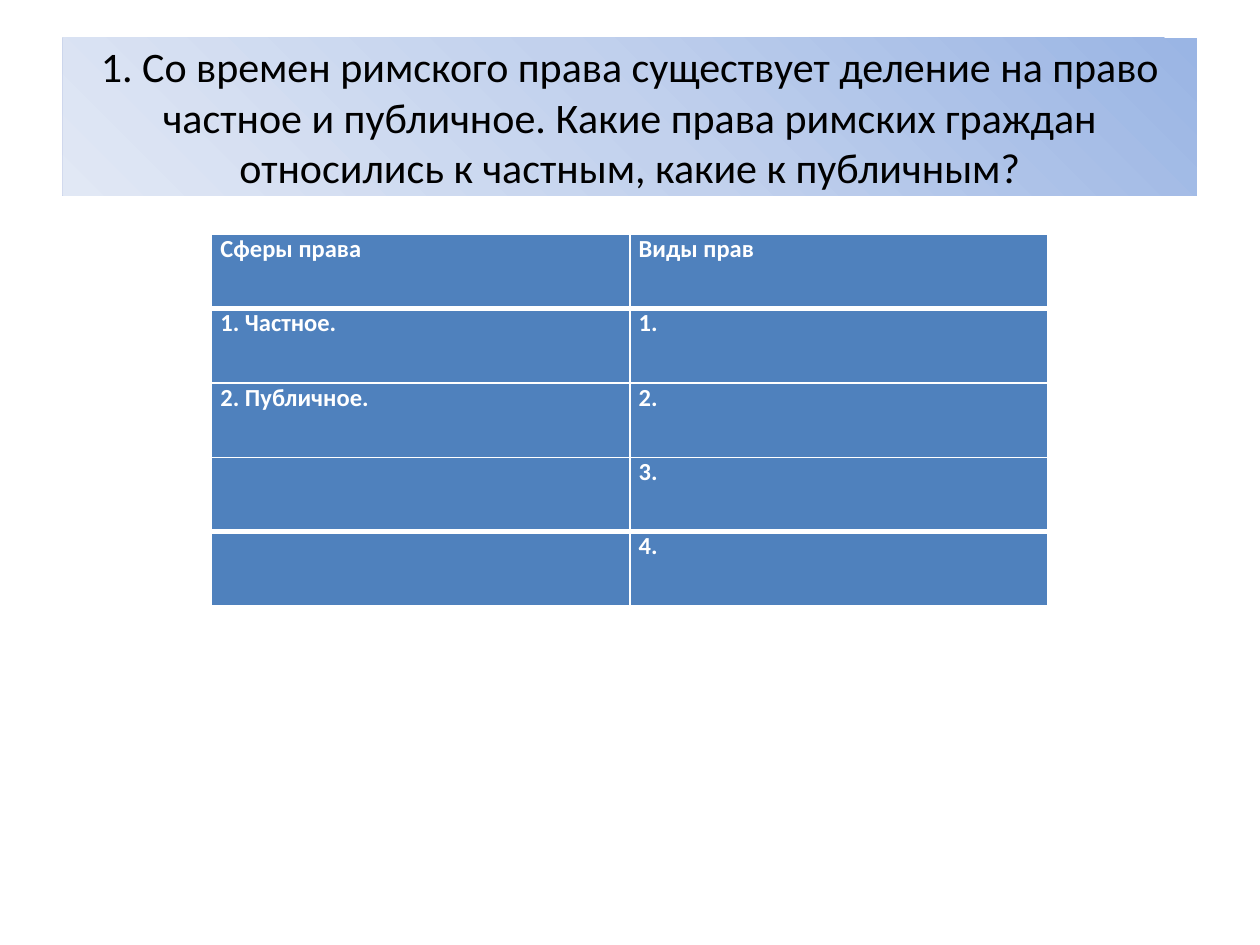
import copy
from dataclasses import dataclass

import pptx
import pptx.dml.color
import pptx.enum.shapes
import pptx.enum.text
import pptx.oxml
import pptx.oxml.ns
import pptx.util
from pptx.util import Inches


@dataclass(frozen=True)
class Theme:
    font: str = "Calibri"
    title_size: int = 24
    cell_size: int = 14
    dark: str = "000000"
    light: str = "FFFFFF"
    cell: str = "4F81BD"
    gradient: tuple = ((0, "9AB5E4"), (0.5, "C2D1ED"), (1, "E1E8F5"))
    thin: int = 1
    thick: int = 3


THEME = Theme()

TITLE = ("1. Со времен римского права существует деление на право частное и публичное. "
         "Какие права римских граждан относились к частным, какие к публичным?")

ROWS = [
    ("Сферы права", "Виды прав"),
    ("1. Частное.", "1."),
    ("2. Публичное.", "2."),
    ("", "3."),
    ("", "4."),
]


def rgb(value):
    return pptx.dml.color.RGBColor.from_string(value)


def write_text(tf, text, size, color, bold=False, align=pptx.enum.text.PP_ALIGN.LEFT):
    p = tf.paragraphs[0]
    p.alignment = align
    p.font.size = pptx.util.Pt(size)
    if text:
        r = p.add_run()
        r.text = text
        r.font.name = THEME.font
        r.font.size = pptx.util.Pt(size)
        r.font.bold = bold
        r.font.color.rgb = rgb(color)


def fill_gradient(sp, stops, angle):
    sp.fill.gradient()
    sp.fill.gradient_angle = angle
    stop_list = sp._element.spPr.find(".//" + pptx.oxml.ns.qn("a:gsLst"))
    while len(stop_list) < len(stops):
        stop_list.append(copy.deepcopy(stop_list[0]))
    for stop, (position, color) in zip(sp.fill.gradient_stops, stops):
        stop.position = position
        stop.color.rgb = rgb(color)


def add_title(s, text):
    sp = s.shapes.add_shape(pptx.enum.shapes.MSO_SHAPE.RECTANGLE,
                            Inches(0.5), Inches(0.3), Inches(9), Inches(1.25))
    sp.shadow.inherit = False
    sp.line.fill.background()
    fill_gradient(sp, THEME.gradient, 225)
    tf = sp.text_frame
    tf.word_wrap = True
    tf.vertical_anchor = pptx.enum.text.MSO_ANCHOR.MIDDLE
    write_text(tf, text, THEME.title_size, THEME.dark,
               align=pptx.enum.text.PP_ALIGN.CENTER)


def set_borders(cell, top, bottom):
    properties = cell._tc.get_or_add_tcPr()
    widths = {"lnL": THEME.thin, "lnR": THEME.thin, "lnT": top, "lnB": bottom}
    for i, (side, width) in enumerate(widths.items()):
        properties.insert(i, pptx.oxml.parse_xml(
            f'<a:{side} {pptx.oxml.ns.nsdecls("a")} w="{pptx.util.Pt(width)}">'
            f'<a:solidFill><a:srgbClr val="{THEME.light}"/></a:solidFill></a:{side}>'))


def add_rights_table(s, rows):
    row_height = Inches(0.59)
    column_width = Inches(3.32)
    table = s.shapes.add_table(len(rows), len(rows[0]), Inches(1.68), Inches(1.86),
                               column_width * len(rows[0]), row_height * len(rows)).table
    table.first_row = False
    table.horz_banding = False
    thick_edges = {1, len(rows) - 1}
    for i, row in enumerate(rows):
        top = THEME.thick if i in thick_edges else THEME.thin
        bottom = THEME.thick if i + 1 in thick_edges else THEME.thin
        for j, text in enumerate(row):
            cell = table.cell(i, j)
            cell.fill.solid()
            cell.fill.fore_color.rgb = rgb(THEME.cell)
            cell.margin_left = cell.margin_right = Inches(0.07)
            cell.margin_top = cell.margin_bottom = 0
            set_borders(cell, top, bottom)
            write_text(cell.text_frame, text, THEME.cell_size, THEME.light, bold=True)


def main():
    prs = pptx.Presentation()
    prs.slide_width = Inches(10)
    prs.slide_height = Inches(7.5)
    s = prs.slides.add_slide(prs.slide_layouts[6])
    add_title(s, TITLE)
    add_rights_table(s, ROWS)
    prs.save("out.pptx")


if __name__ == "__main__":
    main()
